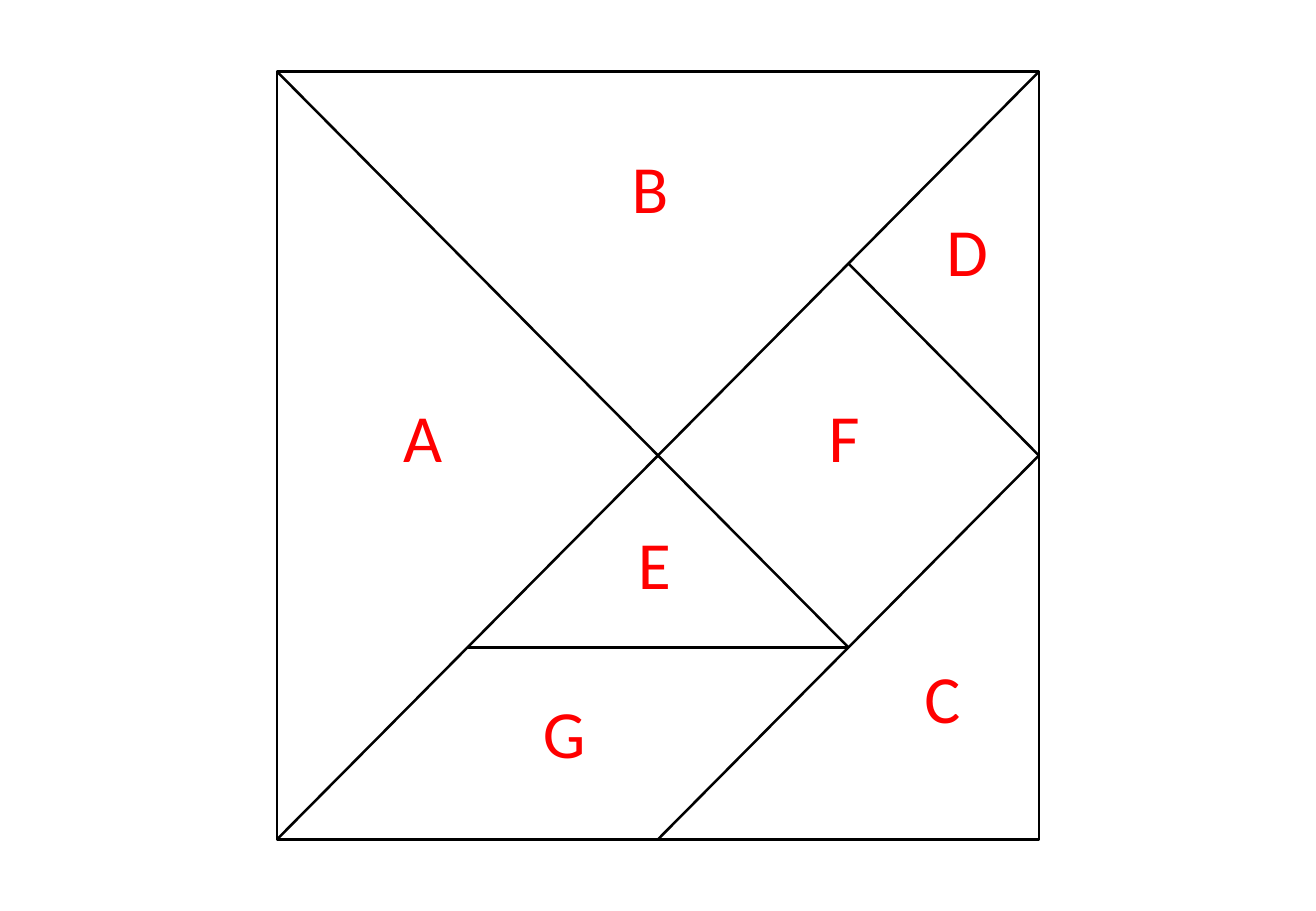
from dataclasses import dataclass

from pptx import Presentation
from pptx.dml.color import RGBColor
from pptx.enum.shapes import MSO_CONNECTOR, MSO_SHAPE
from pptx.enum.text import MSO_AUTO_SIZE
from pptx.oxml.ns import qn
from pptx.util import Inches, Pt
from lxml.etree import SubElement


@dataclass(frozen=True)
class Theme:
    ink: RGBColor = RGBColor(0, 0, 0)
    label: RGBColor = RGBColor(255, 0, 0)
    font: str = "Calibri"
    size: Pt = Pt(40)
    stroke: Pt = Pt(1.5)


theme = Theme()
LEFT, TOP, WIDTH, HEIGHT = 2.28, 0.59, 6.27, 6.32


def node(col, row):
    """Slide position of a point on the square's four-by-four grid."""
    return Inches(LEFT + col * WIDTH / 4), Inches(TOP + row * HEIGHT / 4)


deck = Presentation()
deck.slide_width, deck.slide_height = Inches(10.83), Inches(7.5)
slide = deck.slides.add_slide(deck.slide_layouts[6])
shapes = slide.shapes

square = shapes.add_shape(
    MSO_SHAPE.RECTANGLE, *node(0, 0), Inches(WIDTH), Inches(HEIGHT)
)
square.shadow.inherit = False
square.fill.background()
square.line.color.rgb = theme.ink
square.line.width = theme.stroke

# Each cut runs between two grid points, given as (column, row)
cuts = [
    ((0, 4), (4, 0)),
    ((2, 4), (4, 2)),
    ((3, 3), (0, 0)),
    ((1, 3), (3, 3)),
    ((3, 1), (4, 2)),
]
for start, end in cuts:
    cut = shapes.add_connector(MSO_CONNECTOR.STRAIGHT, *node(*start), *node(*end))
    cut.line.color.rgb = theme.ink
    cut.line.width = theme.stroke
    SubElement(cut._element.spPr, qn("a:effectLst"))

# Letter, left, top, width
labels = [
    ("A", 3.22, 3.2, 0.53),
    ("E", 5.15, 4.25, 0.48),
    ("B", 5.1, 1.15, 0.51),
    ("G", 4.37, 5.64, 0.56),
    ("C", 7.51, 5.35, 0.5),
    ("F", 6.72, 3.2, 0.46),
    ("D", 7.69, 1.67, 0.55),
]
for letter, left, top, width in labels:
    box = shapes.add_textbox(Inches(left), Inches(top), Inches(width), Inches(0.77))
    frame = box.text_frame
    frame.word_wrap = False
    frame.auto_size = MSO_AUTO_SIZE.SHAPE_TO_FIT_TEXT
    run = frame.paragraphs[0].add_run()
    run.text = letter
    run.font.name = theme.font
    run.font.size = theme.size
    run.font.color.rgb = theme.label

deck.save("out.pptx")
